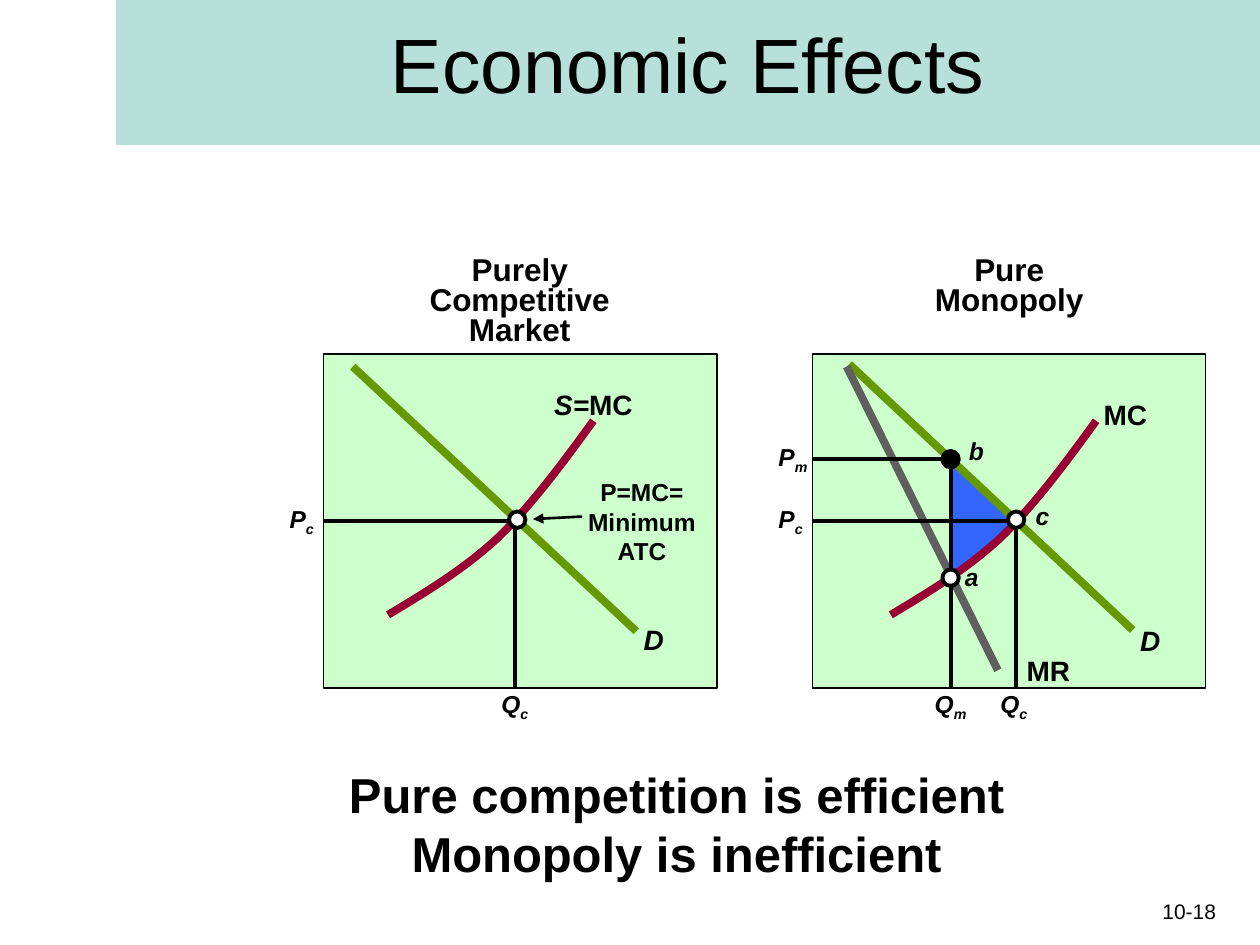
from lxml import etree
from pptx import Presentation, util as u
from pptx.dml.color import RGBColor
from pptx.enum import shapes, text
from pptx.oxml.ns import qn

SLIDE = (10, 7.5)
BLACK, WHITE, MINT, PANEL = "000000", "FFFFFF", "B6E0D8", "CCFFCC"
DEMAND, COST, REVENUE, LOSS, LOSS_EDGE = "669900", "990033", "5F5F5F", "3366FF", "660066"
CENTER, RIGHT = text.PP_ALIGN.CENTER, text.PP_ALIGN.RIGHT

# Panels share a top and a size; the monopoly cost curve is the competitive one shifted.
PANEL_TOP, PANEL_SIZE = 2.81, (3.12, 2.65)
PANEL_LEFTS = {"competitive": 2.57, "monopoly": 6.45}
PRICE_C, PRICE_M = PANEL_TOP + PANEL_SIZE[1] / 2, 3.64
AXIS = PANEL_TOP + PANEL_SIZE[1]
COST_CURVE = [(3.08, 4.88), (3.38, 4.7), (3.68, 4.52), (3.95, 4.27),
              (4.22, 4.01), (4.47, 3.67), (4.71, 3.34)]
COST_SHIFTS = (0, 3.99)
LOSS_AREA = [(7.55, 4.58), (7.86, 4.36), (8.07, 4.12), (7.55, 3.63)]

# start, end, colour, width
CURVES = [
    ((2.8, 2.91), (5.05, 5.01), DEMAND, 4.5),
    ((6.74, 2.89), (8.99, 5), DEMAND, 4.5),
    ((6.72, 2.91), (7.92, 5.32), REVENUE, 4.5),
]
QUANTITIES = [(8.06, PRICE_C), (7.55, PRICE_M), (4.09, PRICE_C)]
# start x, price, panel
PRICES = [(4.11, PRICE_C, "competitive"), (8.04, PRICE_C, "monopoly"),
          (7.56, PRICE_M, "monopoly")]
DOT = 0.13
DOTS = [(4.04, 4.06, WHITE), (7.48, 4.52, WHITE), (8, 4.06, WHITE), (7.48, 3.58, BLACK)]

# box, size, line spacing, paragraphs
BLOCKS = [
    ((3.31, 1.99, 1.63, 0.82), 18, 0.8, ["Purely", "Competitive", "Market"]),
    ((7.32, 1.99, 1.38, 0.58), 18, 0.8, ["Pure", "Monopoly"]),
    ((4.55, 3.74, 1.09, 0.8), 14, None, ["P=MC=", "Minimum", "ATC"]),
    ((2.64, 6.02, 5.46, 1.04), 28, None,
     ["Pure competition is efficient", "Monopoly is inefficient"]),
]
# left, top, width, italic part, upright part
CURVE_LABELS = [
    (5.01, 4.89, 0.36, "D", ""), (8.95, 4.9, 0.36, "D", ""), (4.3, 3.03, 0.82, "S=", "MC"),
    (8.66, 3.11, 0.55, "", "MC"), (8.05, 5.14, 0.55, "", "MR"),
]
# left, top, width, letter, subscript
POINT_LABELS = [
    (2.2, 3.95, 0.4, "P", "c"), (6.08, 3.95, 0.4, "P", "c"), (6.08, 3.46, 0.44, "P", "m"),
    (3.88, 5.42, 0.42, "Q", "c"), (7.84, 5.42, 0.42, "Q", "c"), (7.32, 5.42, 0.46, "Q", "m"),
    (7.56, 4.41, 0.31, "a", ""), (7.59, 3.41, 0.32, "b", ""), (8.12, 3.93, 0.31, "c", ""),
]


def color(value):
    return RGBColor.from_string(value)


def inches(values):
    return [u.Inches(value) for value in values]


def paint(shape, fill, line, width):
    shape.shadow.inherit = False
    if fill:
        shape.fill.solid()
        shape.fill.fore_color.rgb = color(fill)
    else:
        shape.fill.background()
    shape.line.color.rgb = color(line)
    shape.line.width = u.Pt(width)
    return shape


def add_preset(slide, kind, box, fill, width):
    return paint(slide.shapes.add_shape(kind, *inches(box)), fill, BLACK, width)


def add_outline(slide, points, fill, line, width, closed):
    start, *others = [inches(point) for point in points]
    builder = slide.shapes.build_freeform(*start)
    builder.add_line_segments(others, close=closed)
    return paint(builder.convert_to_shape(), fill, line, width)


def add_bezier(slide, points, line, width):
    """Draw a cubic curve: a start point, then triples of two controls and an end."""
    shape = add_outline(slide, points, None, line, width, False)
    segments = list(shape._element.iter(qn("a:lnTo")))
    for first, second, third in zip(*[iter(segments)] * 3):
        first.tag = qn("a:cubicBezTo")
        for segment in (second, third):
            first.append(segment[0])
            segment.getparent().remove(segment)


def add_line(slide, start, end, line, width):
    connector = slide.shapes.add_connector(shapes.MSO_CONNECTOR.STRAIGHT, *inches(start + end))
    connector.line.color.rgb = color(line)
    connector.line.width = u.Pt(width)
    etree.SubElement(connector._element.spPr, qn("a:effectLst"))
    return connector


def add_run(paragraph, words, size, bold=True, italic=False):
    run = paragraph.add_run()
    run.text = words
    font = run.font
    font.name, font.size, font.bold, font.italic = "Arial", u.Pt(size), bold, italic
    font.color.rgb = color(BLACK)
    return run


def add_box(slide, box, wrap=False):
    frame = slide.shapes.add_textbox(*inches(box)).text_frame
    frame.word_wrap = wrap
    if not wrap:
        frame.auto_size = text.MSO_AUTO_SIZE.SHAPE_TO_FIT_TEXT
    return frame


def add_title(slide):
    title = slide.shapes.title
    title.left, title.top, title.width, title.height = inches((0.92, 0, 9.08, 1.15))
    title.fill.solid()
    title.fill.fore_color.rgb = color(MINT)
    title.text_frame.vertical_anchor = text.MSO_ANCHOR.MIDDLE
    paragraph = title.text_frame.paragraphs[0]
    paragraph.alignment, paragraph.line_spacing = CENTER, 0.75
    add_run(paragraph, "Economic Effects", 44, bold=False)


def add_graphs(slide):
    panels = {name: add_preset(slide, shapes.MSO_SHAPE.RECTANGLE,
                               (left, PANEL_TOP, *PANEL_SIZE), PANEL, 0.75)
              for name, left in PANEL_LEFTS.items()}
    add_outline(slide, LOSS_AREA, LOSS, LOSS_EDGE, 0.75, True)
    *demands, revenue = CURVES
    for demand, shift in zip(demands, COST_SHIFTS):
        add_line(slide, *demand)
        add_bezier(slide, [(x + shift, y) for x, y in COST_CURVE], COST, 4.5)
    add_line(slide, *revenue)
    for x, price in QUANTITIES:
        add_line(slide, (x, price), (x, AXIS), BLACK, 2.25)
    for x, price, name in PRICES:
        guide = add_line(slide, (x, price), (PANEL_LEFTS[name], price), BLACK, 2.25)
        if price == PRICE_C:
            guide.end_connect(panels[name], 1)
    for left, top, fill in DOTS:
        add_preset(slide, shapes.MSO_SHAPE.OVAL, (left, top, DOT, DOT), fill, 2.25)
    arrow = add_line(slide, (4.62, 4.1), (4.23, 4.12), BLACK, 1.5)
    etree.SubElement(arrow.line._get_or_add_ln(), qn("a:tailEnd"), type="triangle")


def add_labels(slide):
    for box, size, spacing, lines in BLOCKS:
        frame = add_box(slide, box)
        for index, words in enumerate(lines):
            paragraph = frame.add_paragraph() if index else frame.paragraphs[0]
            paragraph.alignment, paragraph.line_spacing = CENTER, spacing
            add_run(paragraph, words, size)
    for left, top, width, italic, upright in CURVE_LABELS:
        paragraph = add_box(slide, (left, top, width, 0.37)).paragraphs[0]
        for words, slanted in ((italic, True), (upright, False)):
            if words:
                add_run(paragraph, words, 16, italic=slanted)
    for left, top, width, letter, subscript in POINT_LABELS:
        paragraph = add_box(slide, (left, top, width, 0.33)).paragraphs[0]
        add_run(paragraph, letter, 14, italic=True)
        if subscript:
            run = add_run(paragraph, subscript, 14, italic=True)
            run.font._element.set("baseline", "-25000")
    paragraph = add_box(slide, (7.42, 7.08, 2.33, 0.27), wrap=True).paragraphs[0]
    paragraph.alignment = RIGHT
    add_run(paragraph, "10-18", 12, bold=False)


def main():
    presentation = Presentation()
    presentation.slide_width, presentation.slide_height = inches(SLIDE)
    slide = presentation.slides.add_slide(presentation.slide_layouts[5])
    add_title(slide)
    add_graphs(slide)
    add_labels(slide)
    presentation.save("out.pptx")


if __name__ == "__main__":
    main()
